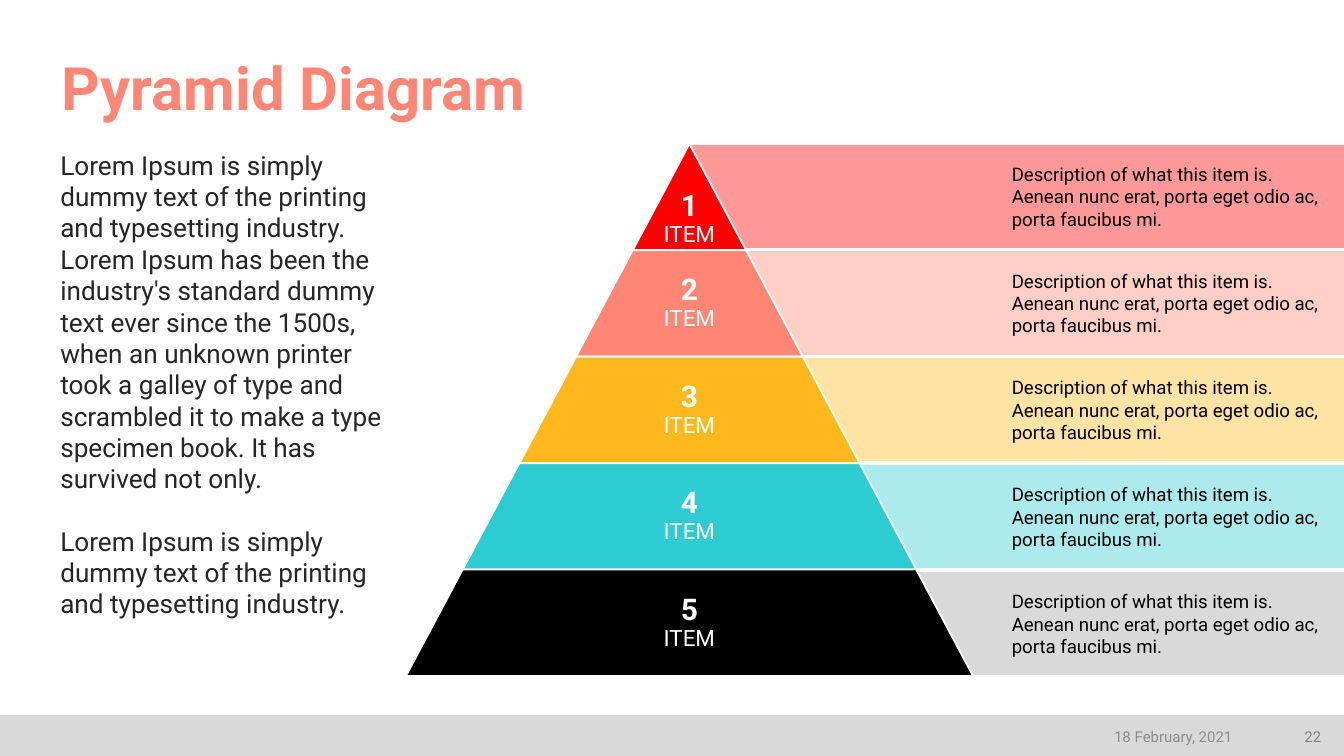
from lxml import etree
from pptx import Presentation
from pptx import util as u
from pptx.dml import color
from pptx.enum import shapes, text
from pptx.oxml import ns

COLORS = {
    "title": "FF8674", "body": "262626", "black": "000000", "white": "FFFFFF",
    "footer": "D9D9D9", "date": "8C8C8C", "number": "808080",
}
# Pyramid colour and band colour of each level, from the top
LEVELS = [("FF0000", "FF9999"), ("FF8674", "FFCFC7"), ("FFB81C", "FFE3A4"),
          ("2DCCD3", "ABEBED"), ("000000", "D9D9D9")]
INTRO = "Lorem Ipsum\u00a0is simply dummy text of the printing and typesetting industry."
BODY = (INTRO + " Lorem Ipsum has been the industry's standard dummy text ever since "
        "the 1500s, when an unknown printer took a galley of type and scrambled it to "
        "make a type specimen book. It has survived not only.")
DESCRIPTION = ("Description of what this item is. Aenean nunc erat, "
               "porta eget odio ac, porta faucibus mi.")
MARGINS = ("margin_left", "margin_top", "margin_right", "margin_bottom")
MIDDLE, BOTTOM = text.MSO_ANCHOR.MIDDLE, text.MSO_ANCHOR.BOTTOM

prs = Presentation()
prs.slide_width = u.Inches(10)
prs.slide_height = prs.slide_width * 9 // 16
s = prs.slides.add_slide(prs.slide_layouts[5])


def add_block(kind, box, fill, line=None):
    sp = s.shapes.add_shape(kind, *map(u.Inches, box))
    sp.shadow.inherit = False
    sp.fill.solid()
    sp.fill.fore_color.rgb = color.RGBColor.from_string(fill)
    if line:
        sp.line.color.rgb = color.RGBColor.from_string(line)
        sp.line.width = u.Pt(1)
    else:
        sp.line.fill.background()
    return sp


def write(sp, box, paragraphs, frame=None, para=None):
    """Place sp and fill it; a paragraph lists lines of (text, size, colour, bold)."""
    sp.left, sp.top, sp.width, sp.height = map(u.Inches, box)
    tf = sp.text_frame
    for name, value in {"word_wrap": True, "auto_size": text.MSO_AUTO_SIZE.NONE,
                        **(frame or {})}.items():
        setattr(tf, name, value)
    for i, lines in enumerate(paragraphs):
        p = tf.add_paragraph() if i else tf.paragraphs[0]
        for name, value in (para or {}).items():
            setattr(p, name, value)
        for j, (words, size, hue, bold) in enumerate(lines):
            if j:
                # Give the line break the size of the text after it
                p.add_line_break()
                br = p._p.findall(ns.qn("a:br"))[-1]
                etree.SubElement(br, ns.qn("a:rPr"), sz=str(size * 100))
            r = p.add_run()
            r.text = words
            for name, value in {"name": "Roboto", "size": u.Pt(size), "bold": bold}.items():
                setattr(r.font, name, value)
            r.font.color.rgb = color.RGBColor.from_string(COLORS[hue])
    return tf


# Footer bar
add_block(shapes.MSO_SHAPE.RECTANGLE, (0, 5.32, 10, 0.31), COLORS["footer"])

# Title
write(s.shapes.title, (0.46, 0.4, 9.1, 0.52), [[("Pyramid Diagram", 32, "title", True)]],
      {"vertical_anchor": BOTTOM, **dict.fromkeys(MARGINS, 0)},
      {"alignment": text.PP_ALIGN.LEFT, "line_spacing": 0.9})

# Bands behind the pyramid, with a thin gap between them
center, top, bottom = 5.13, 1.07, 5.03
step = (bottom - top) / len(LEVELS)
for i, (_, band) in enumerate(LEVELS):
    add_block(shapes.MSO_SHAPE.RECTANGLE,
              (center, top + i * (step + 0.002), 4.92, step - 0.01), band, COLORS["white"])

# Pyramid levels with their labels, each level wider by the same amount
grow = 4.22 / len(LEVELS)
for i, (fill, _) in enumerate(LEVELS):
    y, width = top + i * step, (i + 1) * grow
    sp = add_block(shapes.MSO_SHAPE.TRAPEZOID,
                   (center - width / 2, y, width, step), fill, COLORS["white"])
    sp.adjustments[0] = grow / 2 / step
    write(s.shapes.add_textbox(0, 0, 0, 0), (center - grow / 2, y, grow, step),
          [[(str(i + 1), 16, "white", True), ("ITEM", 12, "white", False)]],
          {"vertical_anchor": MIDDLE if i else BOTTOM,
           **dict.fromkeys(MARGINS, u.Inches(0.02))},
          {"alignment": text.PP_ALIGN.CENTER, "line_spacing": 0.9})

# Descriptions
first, last = 1.16, 4.34
for i in range(len(LEVELS)):
    y = first + i * (last - first) / (len(LEVELS) - 1)
    write(s.shapes.add_textbox(0, 0, 0, 0), (7.43, y, 2.5, 0.61),
          [[(DESCRIPTION, 10, "black", False)]])

# Body text
tf = write(s.shapes.add_textbox(0, 0, 0, 0), (0.35, 1.06, 2.78, 3.64),
           [[(BODY, 14, "body", False)], [(INTRO, 14, "body", False)]])
tf.paragraphs[1].space_before = u.Pt(16.5)

# Slide number and date
for words, hue, box in [("22", "number", (9.56, 5.35, 0.37, 0.26)),
                        ("18 February, 2021", "date", (7.02, 5.35, 2.25, 0.26))]:
    write(s.shapes.add_textbox(0, 0, 0, 0), box, [[(words, 8, hue, False)]],
          {"vertical_anchor": MIDDLE}, {"alignment": text.PP_ALIGN.RIGHT})

prs.save("out.pptx")
